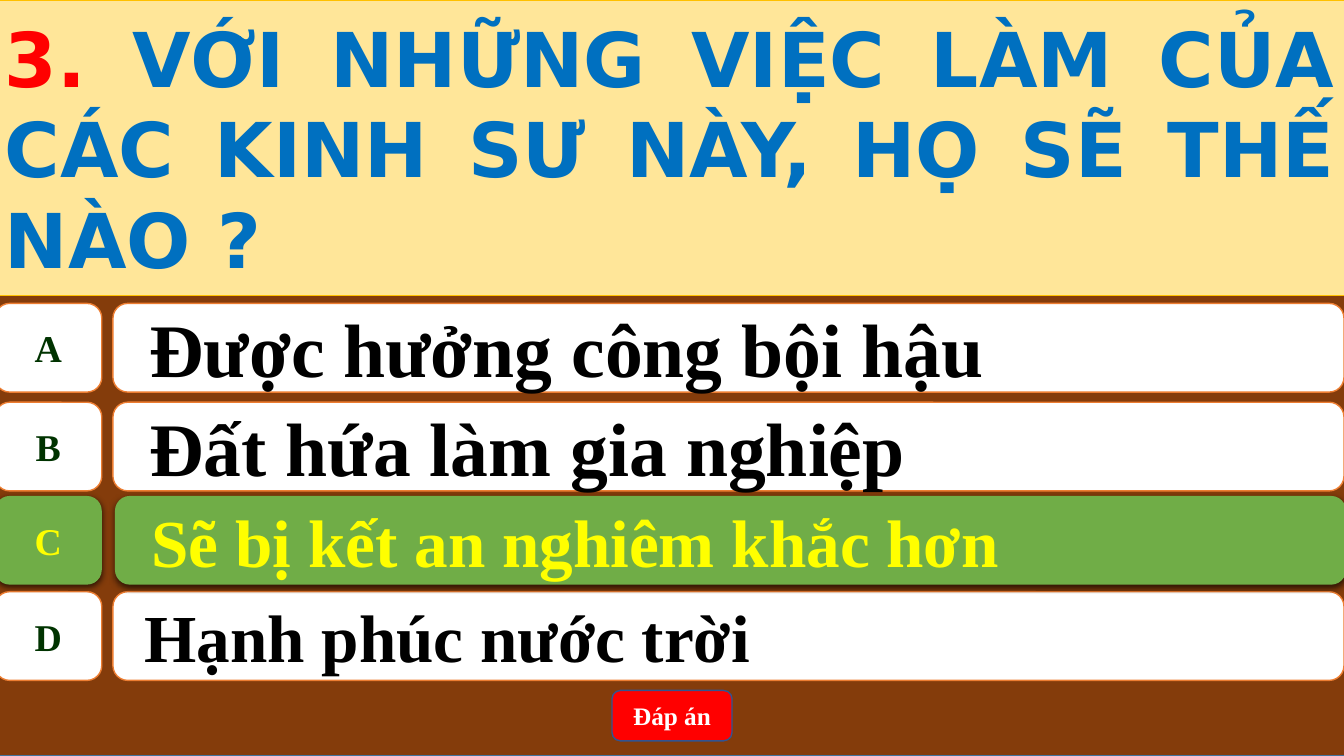
from lxml import etree
from pptx import Presentation
from pptx.dml.color import RGBColor
from pptx.enum.shapes import MSO_SHAPE as Shape
from pptx.enum.text import MSO_ANCHOR as Anchor, PP_ALIGN as Align
from pptx.oxml.ns import qn
from pptx.util import Inches, Pt

# Content
QUESTION = [
    ("3. ", "FF0000"),
    ("VỚI NHỮNG VIỆC LÀM CỦA CÁC KINH SƯ NÀY, HỌ SẼ THẾ NÀO ?", "0070C0"),
]
ANSWERS = [  # letter, answer, top, text size, text indent, is correct
    ("A", "Được hưởng công bội hậu", 3.01, 54, 0.22, False),
    ("B", "Đất hứa làm gia nghiệp", 3.99, 54, 0.22, False),
    ("D", "Hạnh phúc nước trời", 5.87, 48, 0.17, False),
    ("C", "Sẽ bị kết an nghiêm khắc hơn", 4.92, 48, 0.22, True),
]
BUTTON = "Đáp án"

# Layout and style
LEFT, FULL_WIDTH = -0.05, 13.39
ROW_HEIGHT, LETTER_WIDTH = 0.88, 1.06
ANSWER_LEFT, ANSWER_WIDTH = 1.12, 12.21
CORRECT_SHIFT = 0.02
SERIF, SANS = "Times New Roman", "DejaVu Sans"

deck = Presentation()
deck.slide_width, deck.slide_height = Inches(13.33), Inches(7.5)
slide = deck.slides.add_slide(deck.slide_layouts[6])


def color(value):
    return RGBColor.from_string(value)


def add_box(kind, left, top, width, height, fill, line=None, line_width=1):
    box = slide.shapes.add_shape(
        kind, Inches(left), Inches(top), Inches(width), Inches(height))
    box.shadow.inherit = False
    box.fill.solid()
    box.fill.fore_color.rgb = color(fill)
    if line:
        box.line.color.rgb = color(line)
        box.line.width = Pt(line_width)
    else:
        box.line.fill.background()
    return box


def write(box, runs, size, font=SERIF, align=Align.LEFT, indent=0, wrap=True):
    frame = box.text_frame
    frame.word_wrap = wrap
    frame.vertical_anchor = Anchor.MIDDLE
    paragraph = frame.paragraphs[0]
    paragraph.alignment = align
    if indent:
        paragraph._p.get_or_add_pPr().set("marL", str(Inches(indent)))
    for text, tint in runs:
        run = paragraph.add_run()
        run.text = text
        run.font.name, run.font.size, run.font.bold = font, Pt(size), True
        run.font.color.rgb = color(tint)


def add_shadow(box):
    effects = box._element.spPr.find(qn("a:effectLst"))
    shadow = etree.SubElement(
        effects, qn("a:outerShdw"), blurRad=str(Pt(4.5)), dist=str(Pt(1.5)),
        dir="5400000", algn="ctr", rotWithShape="0")
    black = etree.SubElement(shadow, qn("a:srgbClr"), val="000000")
    etree.SubElement(black, qn("a:alpha"), val="63000")


# Backdrop
add_box(Shape.RECTANGLE, LEFT, 0, FULL_WIDTH, 7.5, "843C0B", "43739E")

# Question
question = add_box(Shape.RECTANGLE, LEFT, 0, FULL_WIDTH, 2.93, "FFE699", "FFC000", 0.5)
write(question, QUESTION, 54, font=SANS, align=Align.JUSTIFY)

# Answer rows, the correct one last so that its shadow lies on top
for letter, answer, top, size, indent, correct in ANSWERS:
    fill, line = ("70AD47", None) if correct else ("FFFFFF", "ED7D31")
    answer_left = ANSWER_LEFT + (CORRECT_SHIFT if correct else 0)
    bar = add_box(Shape.ROUNDED_RECTANGLE, answer_left, top,
                  ANSWER_WIDTH, ROW_HEIGHT, fill, line)
    write(bar, [(answer, "FFFF00" if correct else "000000")], size, indent=indent)
    badge = add_box(Shape.FLOWCHART_ALTERNATE_PROCESS, LEFT, top,
                    LETTER_WIDTH, ROW_HEIGHT, fill, line)
    write(badge, [(letter, "FFFF00" if correct else "003300")], 27,
          align=Align.CENTER, wrap=False)
    if correct:
        add_shadow(bar)
        add_shadow(badge)

# Answer button
button = add_box(Shape.ROUNDED_RECTANGLE, 6.07, 6.85, 1.19, 0.5, "FF0000", "325491")
write(button, [(BUTTON, "FFFFFF")], 18, align=Align.CENTER)

deck.save("out.pptx")
